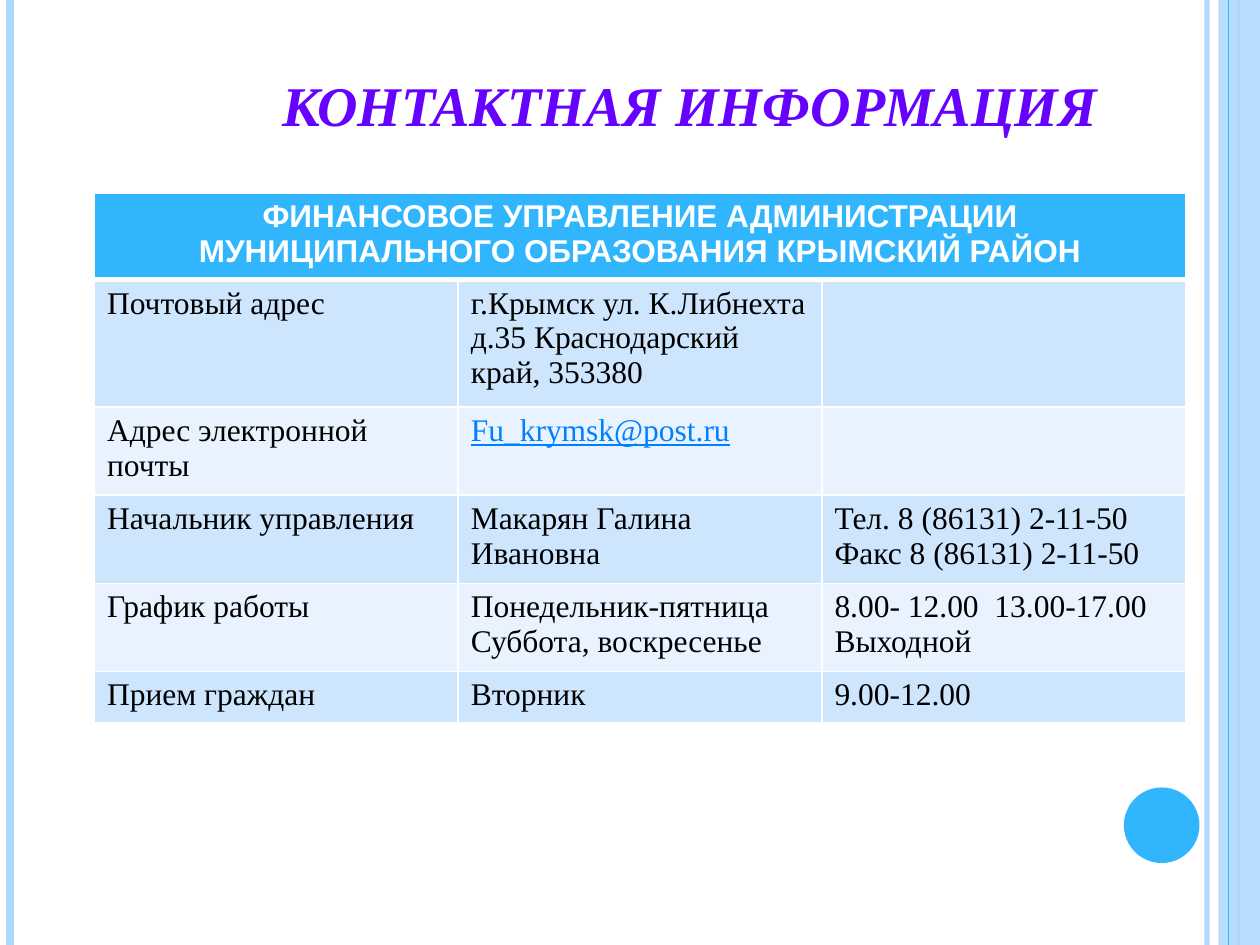
import pptx
import pptx.dml.color
import pptx.enum.shapes
import pptx.enum.text
import pptx.oxml
import pptx.oxml.ns
import pptx.util
from lxml import etree

Inches = pptx.util.Inches
Pt = pptx.util.Pt
qn = pptx.oxml.ns.qn

COLORS = {
    "sky": "31B6FD",
    "pale": "AED7FE",
    "band_dark": "CEE5FE",
    "band_light": "E8F3FF",
    "white": "FFFFFF",
    "black": "000000",
    "link": "0080FF",
    "violet": "6600FF",
}
SERIF = "Times New Roman"
HEADER = ("ФИНАНСОВОЕ УПРАВЛЕНИЕ АДМИНИСТРАЦИИ "
          "МУНИЦИПАЛЬНОГО ОБРАЗОВАНИЯ КРЫМСКИЙ РАЙОН")
EMAIL = "Fu_krymsk@post.ru"
CONTACTS = [
    ("Почтовый адрес", "г.Крымск ул. К.Либнехта д.35 Краснодарский край, 353380", ""),
    ("Адрес электронной почты", EMAIL, ""),
    ("Начальник управления", "Макарян Галина Ивановна",
     "Тел. 8 (86131) 2-11-50\nФакс 8 (86131) 2-11-50"),
    ("График работы", "Понедельник-пятница\nСуббота, воскресенье",
     "8.00- 12.00  13.00-17.00\nВыходной"),
    ("Прием граждан", "Вторник", "9.00-12.00"),
]
ROW_HEIGHTS = [0.69, 1.01, 0.7, 0.7, 0.7, 0.41]


def rgb(name):
    return pptx.dml.color.RGBColor.from_string(COLORS[name])


def set_alpha(element, percent):
    color = next(element.iter(qn("a:srgbClr")))
    etree.SubElement(color, qn("a:alpha"), val=str(percent * 1000))


def add_rule(page, x, width, color, opacity=100):
    """Draw a vertical line over the full height of the page."""
    rule = page.shapes.add_connector(
        pptx.enum.shapes.MSO_CONNECTOR.STRAIGHT,
        Inches(x), 0, Inches(x), Inches(7.5))
    rule.line.width = Pt(width)
    rule.line.color.rgb = rgb(color)
    properties = rule._element.spPr
    if opacity < 100:
        set_alpha(properties, opacity)
    etree.SubElement(properties, qn("a:effectLst"))


def add_plain_shape(page, kind, left, top, width, height, color):
    shape = page.shapes.add_shape(
        kind, Inches(left), Inches(top), Inches(width), Inches(height))
    shape.shadow.inherit = False
    shape.fill.solid()
    shape.fill.fore_color.rgb = rgb(color)
    shape.line.fill.background()
    return shape


def style_paragraph(para, font, size, color, bold=False, italic=False, centered=False):
    if centered:
        para.alignment = pptx.enum.text.PP_ALIGN.CENTER
    para.font.name = font
    para.font.size = Pt(size)
    para.font.bold = bold
    para.font.italic = italic
    para.font.color.rgb = rgb(color)


def add_title(page, text):
    box = page.shapes.title
    box.left, box.top = Inches(1.88), Inches(0.44)
    box.width, box.height = Inches(7.19), Inches(0.94)
    frame = box.text_frame
    frame.text = text
    frame.word_wrap = True
    frame.auto_size = pptx.enum.text.MSO_AUTO_SIZE.NONE
    frame.vertical_anchor = pptx.enum.text.MSO_ANCHOR.TOP
    frame.margin_top = Inches(0.12)
    style_paragraph(frame.paragraphs[0], SERIF, 32, "violet",
                    bold=True, italic=True, centered=True)


def format_cell(cell, fill, bottom_width=1):
    """Give a cell white borders and a plain fill."""
    properties = cell._tc.get_or_add_tcPr()
    for side in "LRTB":
        width = bottom_width if side == "B" else 1
        border = etree.SubElement(properties, qn("a:ln" + side), w=str(Pt(width)))
        solid = etree.SubElement(border, qn("a:solidFill"))
        etree.SubElement(solid, qn("a:srgbClr"), val=COLORS["white"])
    cell.fill.solid()
    cell.fill.fore_color.rgb = rgb(fill)


def add_contact_table(page):
    table = page.shapes.add_table(
        len(ROW_HEIGHTS), 3, Inches(0.75), Inches(1.53),
        Inches(8.66), Inches(sum(ROW_HEIGHTS))).table
    for row, height in zip(table.rows, ROW_HEIGHTS):
        row.height = Inches(height)

    # Header across all columns
    header = table.cell(0, 0)
    header.merge(table.cell(0, 2))
    for cell in table.rows[0].cells:
        format_cell(cell, "sky", bottom_width=3)
    header.text = HEADER
    style_paragraph(header.text_frame.paragraphs[0], "Arial", 18, "white",
                    bold=True, centered=True)

    # Banded contact rows
    for row_number, texts in enumerate(CONTACTS, start=1):
        fill = "band_dark" if row_number % 2 else "band_light"
        for column, text in enumerate(texts):
            cell = table.cell(row_number, column)
            format_cell(cell, fill)
            cell.text = text
            for para in cell.text_frame.paragraphs:
                style_paragraph(para, SERIF, 18, "link" if text == EMAIL else "black")
                para.font.underline = text == EMAIL


def main():
    deck = pptx.Presentation()
    deck.slide_width, deck.slide_height = Inches(10), Inches(7.5)
    page = deck.slides.add_slide(deck.slide_layouts[5])
    shapes = pptx.enum.shapes.MSO_SHAPE

    # Side stripes and circle
    add_rule(page, 9.58, 3, "pale", opacity=93)
    add_rule(page, 0.08, 4.5, "pale")
    add_rule(page, 9.83, 1.5, "pale")
    add_rule(page, 9.75, 0.75, "sky")
    stripe = add_plain_shape(page, shapes.RECTANGLE, 9.67, 0, 0.33, 7.5, "pale")
    set_alpha(stripe._element.spPr, 87)
    add_rule(page, 9.75, 0.75, "sky")
    add_plain_shape(page, shapes.OVAL, 8.92, 6.25, 0.6, 0.6, "sky")

    # Content
    add_title(page, "КОНТАКТНАЯ ИНФОРМАЦИЯ")
    add_contact_table(page)
    deck.save("out.pptx")


if __name__ == "__main__":
    main()
